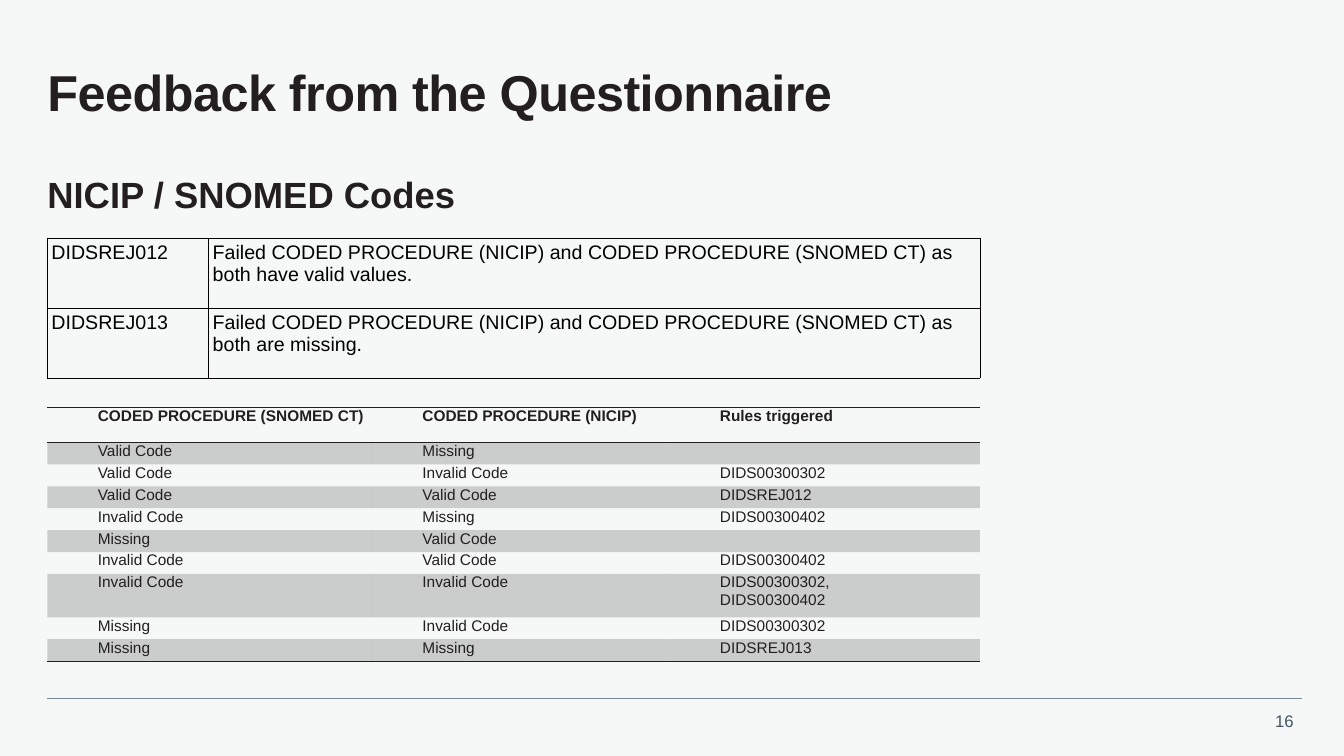
from lxml import etree
from pptx import Presentation
from pptx.dml.color import RGBColor
from pptx.enum.shapes import MSO_CONNECTOR
from pptx.enum.text import MSO_ANCHOR, MSO_AUTO_SIZE, PP_ALIGN
from pptx.oxml.ns import qn
from pptx.util import Inches, Pt

STRAIGHT = MSO_CONNECTOR.STRAIGHT
MIDDLE, TOP = MSO_ANCHOR.MIDDLE, MSO_ANCHOR.TOP
LEFT, RIGHT = PP_ALIGN.LEFT, PP_ALIGN.RIGHT
NO_AUTOFIT = MSO_AUTO_SIZE.NONE

FONT = "Arial"
INK, BLACK, NAVY = "231F20", "000000", "425563"
RULE, PAPER = "768692", "F6F8F8"
NO_STYLE = "{2D5ABB26-0587-4C30-8999-92F81FD0307C}"
EDGE = 0.47

REJECTIONS = [
    ("DIDSREJ012", "Failed CODED PROCEDURE (NICIP) and CODED PROCEDURE "
                   "(SNOMED CT) as both have valid values."),
    ("DIDSREJ013", "Failed CODED PROCEDURE (NICIP) and CODED PROCEDURE "
                   "(SNOMED CT) as both are missing."),
]
RULES = [
    ("CODED PROCEDURE (SNOMED CT)", "CODED PROCEDURE (NICIP)", "Rules triggered"),
    ("Valid Code", "Missing", ""),
    ("Valid Code", "Invalid Code", "DIDS00300302"),
    ("Valid Code", "Valid Code", "DIDSREJ012"),
    ("Invalid Code", "Missing", "DIDS00300402"),
    ("Missing", "Valid Code", ""),
    ("Invalid Code", "Valid Code", "DIDS00300402"),
    ("Invalid Code", "Invalid Code", "DIDS00300302,\nDIDS00300402"),
    ("Missing", "Invalid Code", "DIDS00300302"),
    ("Missing", "Missing", "DIDSREJ013"),
]


def rgb(value):
    """Return the colour for a hex string."""
    return RGBColor.from_string(value)


def add_run(p, text, size, color, bold=False):
    """Add one formatted run to a paragraph."""
    r = p.add_run()
    r.text = text
    r.font.name, r.font.size, r.font.bold = FONT, Pt(size), bold
    r.font.color.rgb = rgb(color)
    return r


def set_frame(tf, inset=0, anchor=TOP, wrap=True):
    """Set the margins, anchor and wrapping of a text frame."""
    tf.auto_size = NO_AUTOFIT
    tf.word_wrap = wrap
    tf.vertical_anchor = anchor
    tf.margin_left = tf.margin_right = Inches(inset)
    tf.margin_top = tf.margin_bottom = Inches(inset / 2)


def set_title(s, text):
    """Place and format the slide title."""
    sp = s.shapes.title
    sp.left, sp.top = Inches(EDGE), Inches(0.47)
    sp.width, sp.height = Inches(12.47), Inches(0.95)
    set_frame(sp.text_frame, anchor=MIDDLE)
    p = sp.text_frame.paragraphs[0]
    p.alignment, p.line_spacing = LEFT, 0.9
    r = add_run(p, text, 36, INK, True)
    r.font._element.set("spc", "-40")


def add_text(s, box, text, size, color, bold=False, align=LEFT, inset=0, wrap=True):
    """Add a one-paragraph text box."""
    sp = s.shapes.add_textbox(*map(Inches, box))
    set_frame(sp.text_frame, inset, wrap=wrap)
    p = sp.text_frame.paragraphs[0]
    p.alignment = align
    add_run(p, text, size, color, bold)


def add_rule(s, left, right, y):
    """Add the horizontal footer line."""
    line = s.shapes.add_connector(
        STRAIGHT, Inches(left), Inches(y), Inches(right), Inches(y))
    line.line.color.rgb = rgb(RULE)
    line.line.width = Pt(0.5)
    etree.SubElement(line._element.spPr, qn("a:effectLst"))


def set_borders(cell, sides, color, width):
    """Draw borders on the given sides, ordered among L, R, T and B."""
    tc_pr = cell._tc.get_or_add_tcPr()
    for side in sides:
        ln = etree.SubElement(tc_pr, qn(f"a:ln{side}"), w=str(Pt(width)))
        fill = etree.SubElement(ln, qn("a:solidFill"))
        etree.SubElement(fill, qn("a:srgbClr"), val=color)


def shade(cell, color, opacity):
    """Fill a cell with a colour at an opacity in percent."""
    cell.fill.solid()
    cell.fill.fore_color.rgb = rgb(color)
    clr = cell._tc.tcPr.find(qn("a:solidFill")).find(qn("a:srgbClr"))
    etree.SubElement(clr, qn("a:alpha"), val=str(opacity * 1000))


def fill_cell(cell, text, size, color, bold=False, margin=0, indent=0):
    """Write the lines of a cell, one paragraph each."""
    cell.margin_left = cell.margin_top = Inches(margin)
    cell.margin_right = cell.margin_bottom = 0
    tf = cell.text_frame
    for i, line in enumerate(text.split("\n")):
        p = tf.add_paragraph() if i else tf.paragraphs[0]
        p_pr = p._p.get_or_add_pPr()
        p_pr.set("marL", str(Inches(indent)))
        p_pr.set("indent", "0")
        if line:
            add_run(p, line, size, color, bold)
        else:
            etree.SubElement(p._p, qn("a:endParaRPr"), sz=str(size * 100))


def add_grid(s, left, top, widths, heights):
    """Add an unstyled table with the given columns and rows."""
    frame = s.shapes.add_table(
        len(heights), len(widths), Inches(left), Inches(top),
        Inches(sum(widths)), Inches(sum(heights)))
    table = frame.table
    table.first_row = table.horz_banding = False
    frame._element.find(".//" + qn("a:tableStyleId")).text = NO_STYLE
    for col, width in zip(table.columns, widths):
        col.width = Inches(width)
    for row, height in zip(table.rows, heights):
        row.height = Inches(height)
    return table


def add_rejections(s):
    """Add the bordered table of rejection codes."""
    count = len(REJECTIONS)
    table = add_grid(s, EDGE, 2.36, [1.6, 7.65], [1.39 / count] * count)
    for i, row in enumerate(REJECTIONS):
        for j, text in enumerate(row):
            cell = table.cell(i, j)
            fill_cell(cell, text, 14, BLACK, margin=0.04)
            set_borders(cell, "LRTB", BLACK, 0.5)
            cell.fill.background()


def add_rules(s):
    """Add the banded table of rules triggered."""
    head, tall = 0.35, 0.43
    single = (2.52 - head - tall) / (len(RULES) - 2)
    heights = [head] + [tall if "\n" in row[-1] else single for row in RULES[1:]]
    table = add_grid(s, EDGE, 4.04, [3.22, 2.95, 3.08], heights)
    sides = {0: "TB", len(RULES) - 1: "B"}
    for i, row in enumerate(RULES):
        for j, text in enumerate(row):
            cell = table.cell(i, j)
            fill_cell(cell, text, 11, INK, bold=i == 0, indent=0.5)
            set_borders(cell, sides.get(i, ""), INK, 1)
            if i % 2:
                shade(cell, INK, 20)
            else:
                cell.fill.background()


def main():
    """Build and save the slide."""
    prs = Presentation()
    prs.slide_width, prs.slide_height = Inches(13.33), Inches(7.5)
    s = prs.slides.add_slide(prs.slide_layouts[5])
    s.background.fill.solid()
    s.background.fill.fore_color.rgb = rgb(PAPER)
    add_text(s, (12.52, 7, 0.41, 0.3), "16", 12, NAVY, align=RIGHT, inset=0.1, wrap=False)
    add_rule(s, EDGE, 12.91, 6.93)
    add_text(s, (EDGE, 1.71, 12.13, 0.5), "NICIP / SNOMED Codes", 26, INK, True)
    set_title(s, "Feedback from the Questionnaire")
    add_rejections(s)
    add_rules(s)
    prs.save("out.pptx")


if __name__ == "__main__":
    main()
